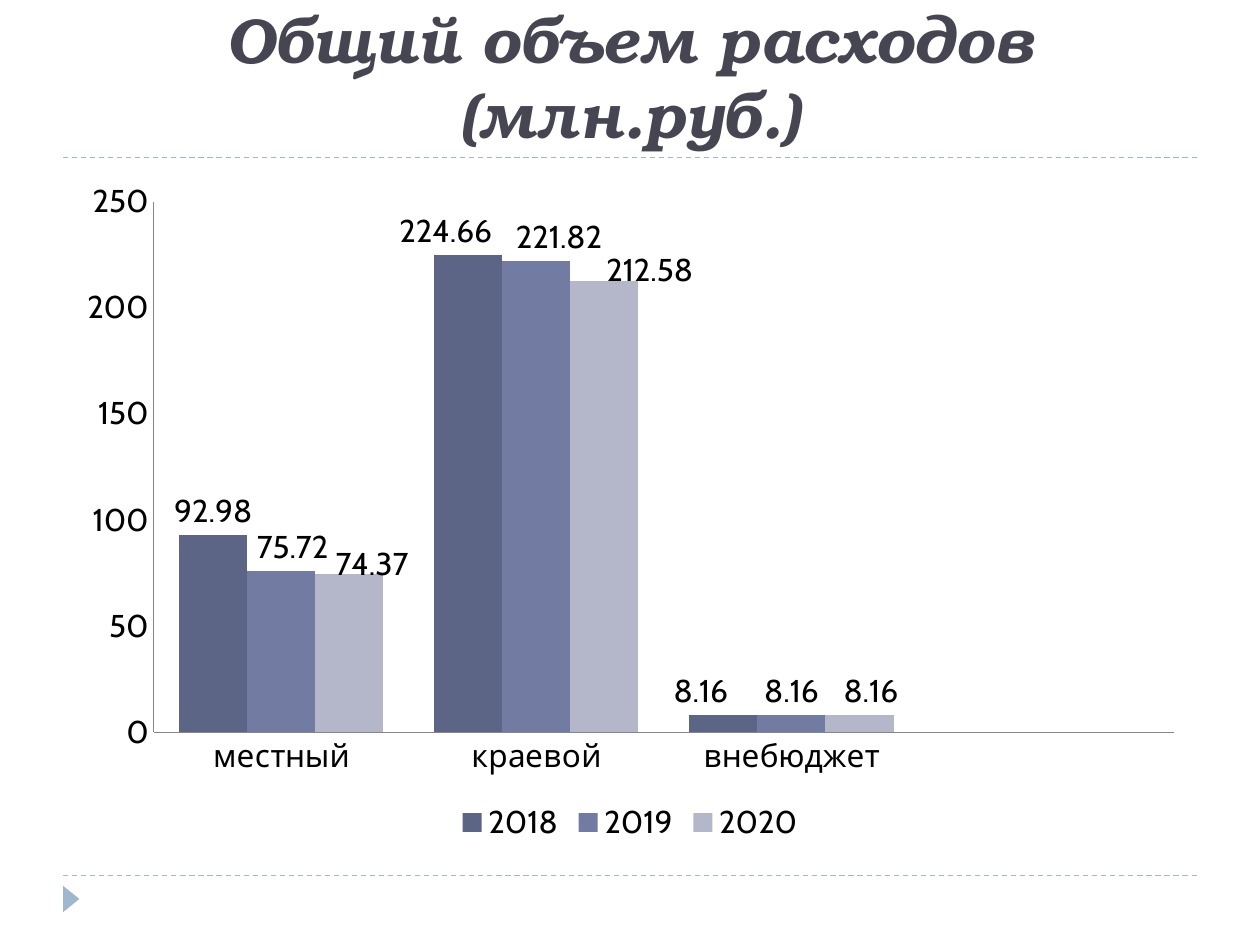
from lxml.etree import SubElement
from pptx import Presentation
from pptx.chart.data import CategoryChartData
from pptx.dml.color import RGBColor
from pptx.enum.chart import XL_CHART_TYPE, XL_LABEL_POSITION, XL_LEGEND_POSITION, XL_TICK_MARK
from pptx.enum.dml import MSO_LINE
from pptx.enum.shapes import MSO_CONNECTOR, MSO_SHAPE
from pptx.enum.text import MSO_ANCHOR, PP_ALIGN
from pptx.oxml import parse_xml
from pptx.oxml.ns import qn
from pptx.util import Inches, Pt

COLORS = {"title": "464653", "rule": "9FB8CD", "axis": "868686", "text": "000000",
          "2018": "5C6586", "2019": "727CA3", "2020": "B4B7C9"}
TITLE = "Общий объем расходов (млн.руб.)"
BUDGETS = ["местный", "краевой", "внебюджет", ""]
EXPENSES = {
    "2018": [92.98, 224.66, 8.16, None],
    "2019": [75.72, 221.82, 8.16, None],
    "2020": [74.37, 212.58, 8.16, None],
}
# Label shifts from the bar top, as fractions of the chart: year -> budget -> (x, y)
LABEL_SHIFTS = {
    "2018": {1: (-0.02, 0), 2: (-0.02, 0)},
    "2019": {0: (0.01, 0), 1: (0.02, 0)},
    "2020": {0: (0.02, 0.02), 1: (0.04, 0.02), 2: (0.01, 0)},
}
LEFT, WIDTH = 0.5, 9
RULE_TOPS = [6.95, 1.25]
CHART_NS = "http://schemas.openxmlformats.org/drawingml/2006/chart"


def color(name):
    return RGBColor.from_string(COLORS[name])


def manual_layout(**settings):
    items = "".join(f'<c:{tag} val="{value}"/>' for tag, value in settings.items())
    return parse_xml(f'<c:layout xmlns:c="{CHART_NS}"><c:manualLayout>{items}'
                     '</c:manualLayout></c:layout>')


def add_rule(slide, top):
    rule = slide.shapes.add_connector(MSO_CONNECTOR.STRAIGHT, Inches(LEFT), Inches(top),
                                      Inches(LEFT + WIDTH), Inches(top))
    rule.line.color.rgb = color("rule")
    rule.line.width = Pt(0.75)
    rule.line.dash_style = MSO_LINE.DASH
    SubElement(rule._element.spPr, qn("a:effectLst"))


def add_marker(slide):
    marker = slide.shapes.add_shape(MSO_SHAPE.ISOSCELES_TRIANGLE, Inches(0.46), Inches(7.07),
                                    Inches(0.21), Inches(0.13))
    marker.rotation = 90
    marker.shadow.inherit = False
    marker.fill.solid()
    marker.fill.fore_color.rgb = color("rule")
    marker.line.fill.background()


def add_title(slide):
    frame = slide.shapes.add_textbox(Inches(LEFT), Inches(0.17), Inches(WIDTH),
                                     Inches(1.08)).text_frame
    frame.word_wrap = True
    frame.vertical_anchor = MSO_ANCHOR.BOTTOM
    paragraph = frame.paragraphs[0]
    paragraph.alignment = PP_ALIGN.CENTER
    run = paragraph.add_run()
    run.text = TITLE
    title_format = {"name": "TeX Gyre Bonum", "size": Pt(36), "bold": True, "italic": True}
    for attribute, value in title_format.items():
        setattr(run.font, attribute, value)
    run.font.color.rgb = color("title")


def style_series(series):
    series.format.fill.solid()
    series.format.fill.fore_color.rgb = color(series.name)
    series.invert_if_negative = False
    series.data_labels.show_value = True
    series.data_labels.position = XL_LABEL_POSITION.OUTSIDE_END
    for index, (x, y) in LABEL_SHIFTS[series.name].items():
        series.points[index].data_label.position = XL_LABEL_POSITION.OUTSIDE_END
        label_index = series._element.xpath(f'c:dLbls/c:dLbl/c:idx[@val="{index}"]')[0]
        label_index.addnext(manual_layout(x=x, y=y))


def add_expense_chart(slide):
    data = CategoryChartData()
    data.categories = BUDGETS
    for year, values in EXPENSES.items():
        data.add_series(year, values)
    chart = slide.shapes.add_chart(XL_CHART_TYPE.COLUMN_CLUSTERED, Inches(LEFT), Inches(1.33),
                                   Inches(WIDTH), Inches(5.4), data).chart
    chart.has_title = False
    chart.font.name = "Cabin"
    chart.font.size = Pt(18)
    chart.font.color.rgb = color("text")
    chart.has_legend = True
    chart.legend.position = XL_LEGEND_POSITION.BOTTOM
    chart.legend.include_in_layout = False

    for axis in (chart.category_axis, chart.value_axis):
        axis.has_major_gridlines = False
        axis.major_tick_mark = axis.minor_tick_mark = XL_TICK_MARK.NONE
        axis.format.line.color.rgb = color("axis")
        axis.format.line.width = Pt(0.75)
    for attribute, value in {"minimum_scale": 0, "maximum_scale": 250, "major_unit": 50}.items():
        setattr(chart.value_axis, attribute, value)

    plot = chart.plots[0]
    plot.gap_width = 75
    plot.overlap = 0
    plot.vary_by_categories = False
    for series in plot.series:
        style_series(series)

    plot_area = chart._chartSpace.chart.plotArea
    for automatic in plot_area.findall(qn("c:layout")):
        plot_area.remove(automatic)
    plot_area.insert(0, manual_layout(layoutTarget="inner", xMode="edge", yMode="edge",
                                      x=0.08, y=0.05, w=0.9, h=0.78))


def main():
    presentation = Presentation()
    presentation.slide_width, presentation.slide_height = Inches(10), Inches(7.5)
    slide = presentation.slides.add_slide(presentation.slide_layouts[6])
    for top in RULE_TOPS:
        add_rule(slide, top)
    add_marker(slide)
    add_title(slide)
    add_expense_chart(slide)
    presentation.save("out.pptx")


if __name__ == "__main__":
    main()
